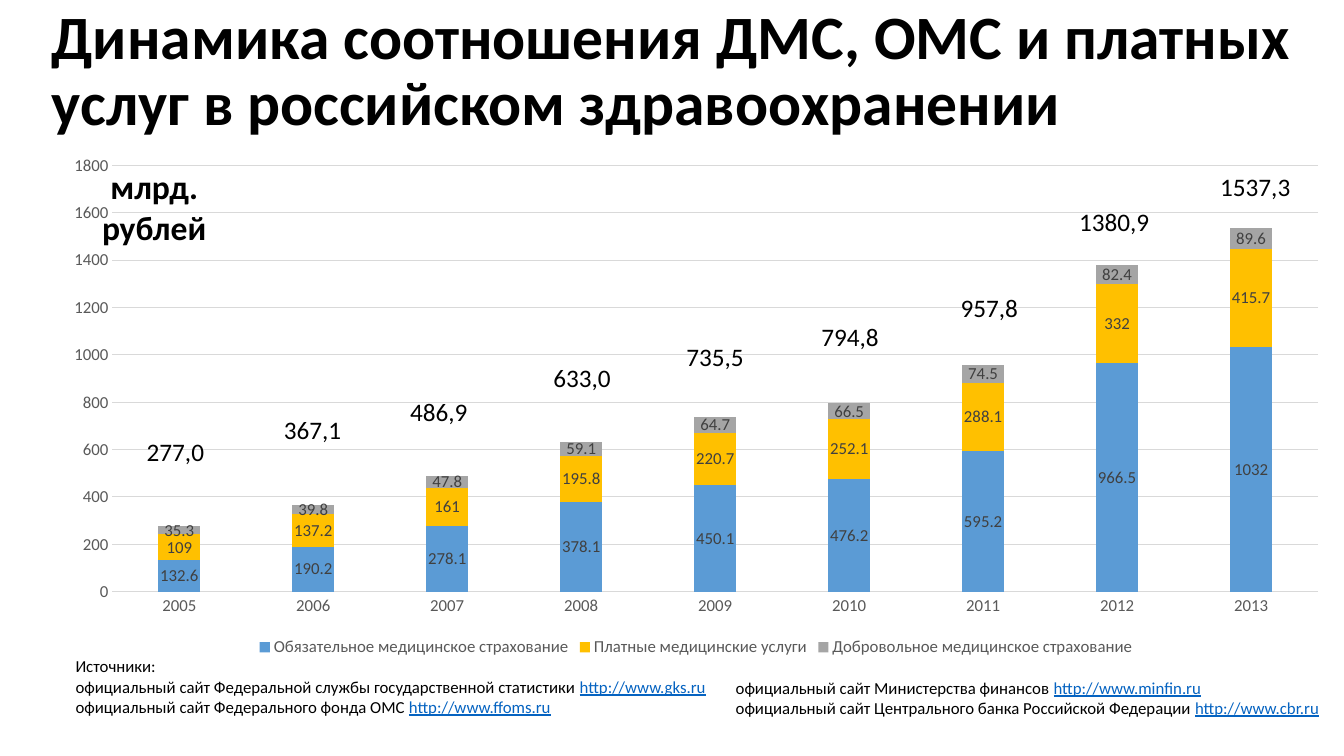
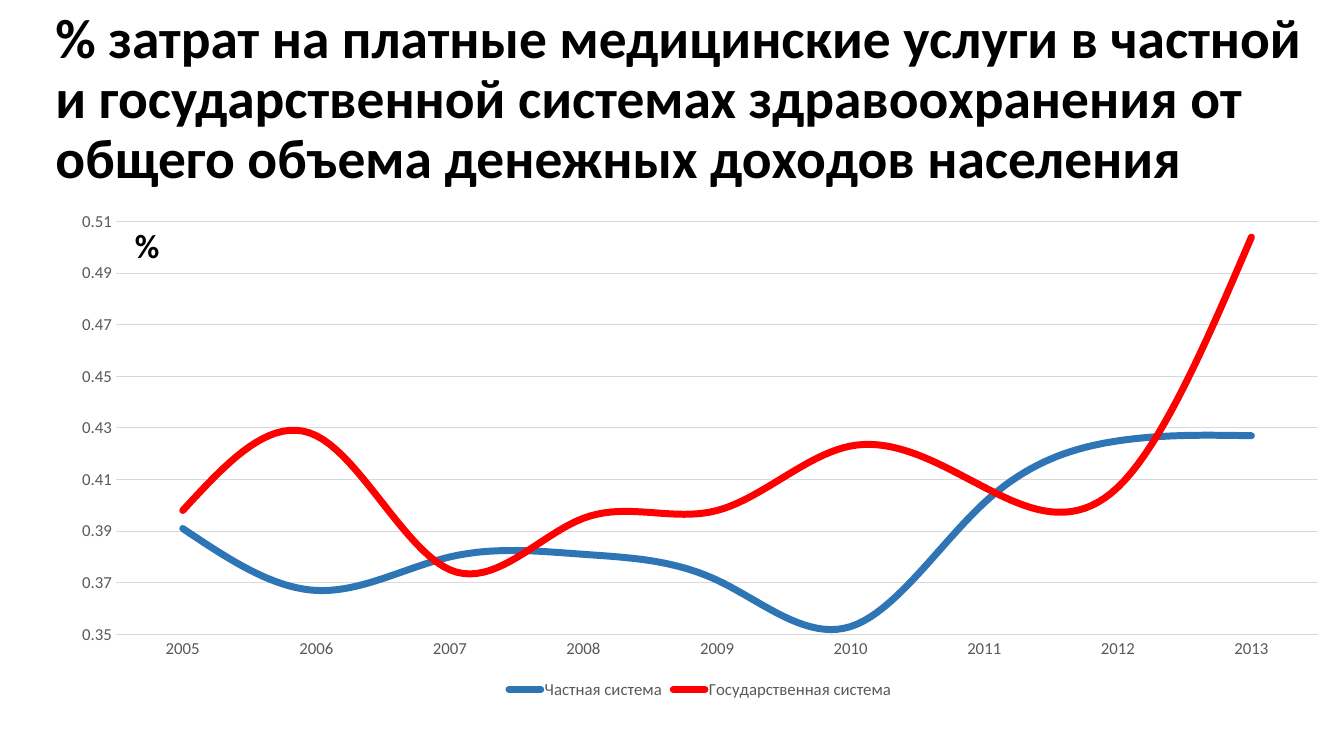
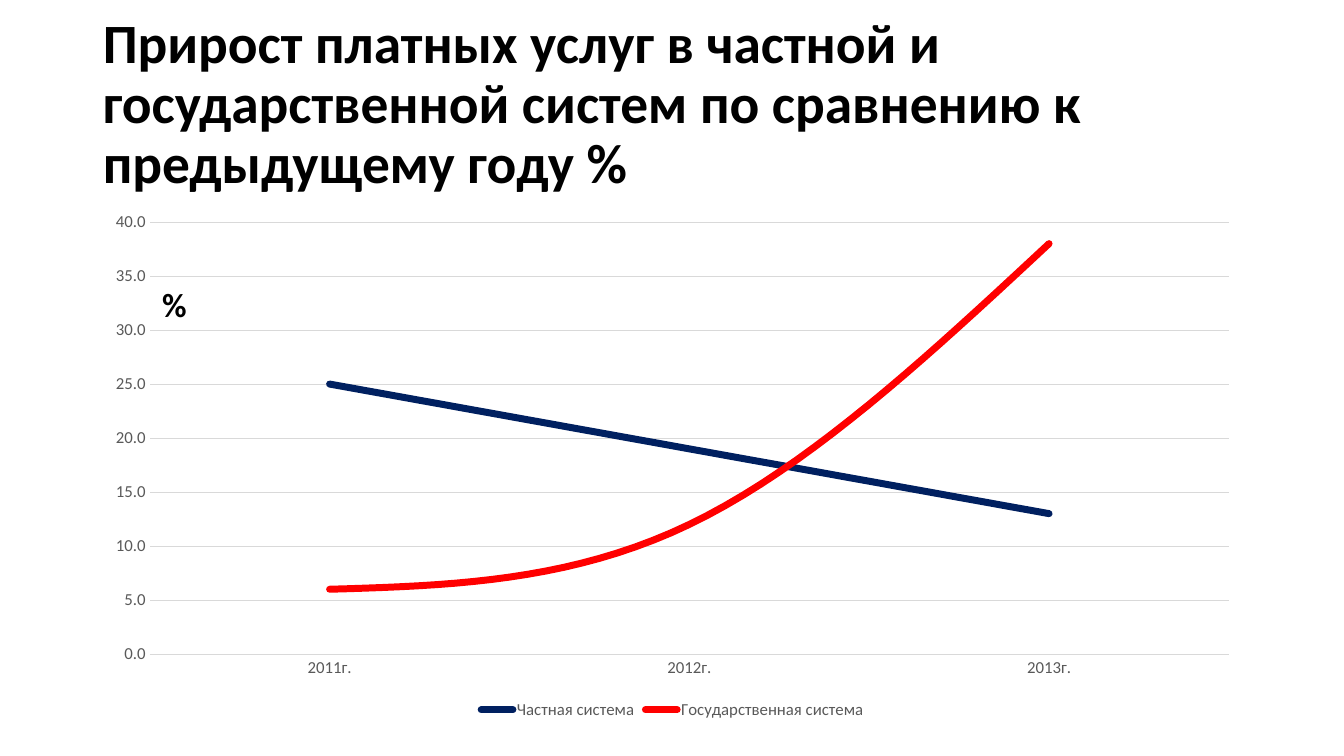
"""Build three slides on paid, compulsory and voluntary medical care."""
from pptx import Presentation
from pptx.chart.data import CategoryChartData
from pptx.dml.color import RGBColor
from pptx.enum.chart import XL_CHART_TYPE, XL_LABEL_POSITION, XL_LEGEND_POSITION, XL_TICK_MARK
from pptx.enum.text import MSO_ANCHOR, MSO_AUTO_SIZE, PP_ALIGN
from pptx.util import Inches, Pt

BLACK = RGBColor(0x00, 0x00, 0x00)
AXIS_GREY = RGBColor(0x59, 0x59, 0x59)
LABEL_GREY = RGBColor(0x40, 0x40, 0x40)
GRID_GREY = RGBColor(0xD9, 0xD9, 0xD9)
LINK_BLUE = RGBColor(0x05, 0x63, 0xC1)
SKY = RGBColor(0x5B, 0x9B, 0xD5)
GOLD = RGBColor(0xFF, 0xC0, 0x00)
SILVER = RGBColor(0xA5, 0xA5, 0xA5)
BLUE = RGBColor(0x2E, 0x75, 0xB6)
NAVY = RGBColor(0x00, 0x20, 0x60)
RED = RGBColor(0xFF, 0x00, 0x00)

FONT = "Calibri"
TITLE_ONLY = 5
YEARS = [str(year) for year in range(2005, 2014)]


class Deck:
    """Hold the shared style and the current slide; lengths are percent of the slide."""

    def __init__(self):
        self.show = Presentation()
        self.show.slide_width = Inches(13.33)
        self.show.slide_height = Inches(7.5)
        self.slide = None

    def place(self, left, top, width, height):
        across = self.show.slide_width / 100
        down = self.show.slide_height / 100
        return [round(n) for n in (left * across, top * down, width * across, height * down)]

    def style(self, font, size, color, bold=False):
        font.name = FONT
        font.size = Pt(size)
        font.color.rgb = color
        font.bold = bold

    def phrase(self, paragraph, text, size, color=BLACK, bold=False):
        run = paragraph.add_run()
        run.text = text
        self.style(run.font, size, color, bold)
        return run

    def title(self, text, area, size):
        self.slide = self.show.slides.add_slide(self.show.slide_layouts[TITLE_ONLY])
        heading = self.slide.shapes.title
        heading.left, heading.top, heading.width, heading.height = self.place(*area)
        frame = heading.text_frame
        frame.auto_size = MSO_AUTO_SIZE.NONE
        frame.vertical_anchor = MSO_ANCHOR.MIDDLE
        line = frame.paragraphs[0]
        line.alignment = PP_ALIGN.LEFT
        line.line_spacing = 0.9
        self.phrase(line, text, size, bold=True)

    def frame(self, area):
        frame = self.slide.shapes.add_textbox(*self.place(*area)).text_frame
        frame.word_wrap = True
        return frame

    def caption(self, text, area, size, bold=False):
        line = self.frame(area).paragraphs[0]
        line.alignment = PP_ALIGN.CENTER
        self.phrase(line, text, size, bold=bold)

    def unit(self, text, left, top):
        self.caption(text, (left, top, 12.15, 3.47), 24, bold=True)

    def sources(self, entries, area):
        frame = self.frame(area)
        for index, (owner, address) in enumerate(entries):
            line = frame.add_paragraph() if index else frame.paragraphs[0]
            self.phrase(line, owner, 12)
            if address:
                self.phrase(line, address, 12, LINK_BLUE).font.underline = True

    def chart(self, kind, area, categories, series, scale, number_format="General"):
        data = CategoryChartData()
        data.categories = categories
        for name, values, _ in series:
            data.add_series(name, values)
        chart = self.slide.shapes.add_chart(kind, *self.place(*area), data).chart
        chart.has_title = False
        self.style(chart.font, 12, AXIS_GREY)
        chart.has_legend = True
        chart.legend.position = XL_LEGEND_POSITION.BOTTOM
        chart.legend.include_in_layout = False
        self.style(chart.legend.font, 12, AXIS_GREY)

        years, amounts = chart.category_axis, chart.value_axis
        for axis in (years, amounts):
            axis.major_tick_mark = axis.minor_tick_mark = XL_TICK_MARK.NONE
            self.style(axis.tick_labels.font, 12, AXIS_GREY)
        amounts.minimum_scale, amounts.maximum_scale, amounts.major_unit = scale
        amounts.tick_labels.number_format = number_format
        amounts.tick_labels.number_format_is_linked = False
        amounts.format.line.fill.background()
        for rule in (years.format.line, amounts.major_gridlines.format.line):
            rule.color.rgb = GRID_GREY
            rule.width = Pt(0.75)
        return chart

    def stacked_chart(self, area, categories, series, scale):
        plot = self.chart(XL_CHART_TYPE.COLUMN_STACKED, area, categories, series, scale).plots[0]
        plot.vary_by_categories = False
        plot.gap_width = 219
        plot.overlap = 100
        plot.has_data_labels = True
        plot.data_labels.show_value = True
        plot.data_labels.position = XL_LABEL_POSITION.CENTER
        self.style(plot.data_labels.font, 12, LABEL_GREY)
        for column, (_, _, color) in zip(plot.series, series):
            column.format.fill.solid()
            column.format.fill.fore_color.rgb = color

    def line_chart(self, area, categories, series, scale, number_format):
        chart = self.chart(XL_CHART_TYPE.LINE, area, categories, series, scale, number_format)
        chart.plots[0].vary_by_categories = False
        for curve, (_, _, color) in zip(chart.plots[0].series, series):
            curve.smooth = True
            curve.format.line.color.rgb = color
            curve.format.line.width = Pt(5)
        for stroke in chart.element.xpath(".//c:ser/c:spPr/a:ln"):
            stroke.set("cap", "rnd")


def insurance_slide(deck):
    deck.title("Динамика соотношения ДМС, ОМС и платных услуг в российском здравоохранении",
               (3.08, -0.1, 96.92, 19.33), 44)
    deck.stacked_chart((3.6, 19.2, 96.4, 68.27), YEARS, [
        ("Обязательное медицинское страхование",
         (132.6, 190.2, 278.1, 378.1, 450.1, 476.2, 595.2, 966.5, 1032), SKY),
        ("Платные медицинские услуги",
         (109, 137.2, 161, 195.8, 220.7, 252.1, 288.1, 332, 415.7), GOLD),
        ("Добровольное медицинское страхование",
         (35.3, 39.8, 47.8, 59.1, 64.7, 66.5, 74.5, 82.4, 89.6), SILVER),
    ], (0, 1800, 200))
    deck.sources([
        ("Источники:", ""),
        ("официальный сайт Федеральной службы государственной статистики ", "http://www.gks.ru"),
        ("официальный сайт Федерального фонда ОМС ", "http://www.ffoms.ru"),
    ], (4.88, 86.13, 50, 9.47))
    deck.sources([
        ("официальный сайт Министерства финансов ", "http://www.minfin.ru"),
        ("официальный сайт Центрального банка Российской Федерации ", "http://www.cbr.ru"),
    ], (54, 88.93, 46, 6.67))
    deck.unit("млрд. рублей", 5.4, 21.33)
    totals = [
        ("277,0", 13.05, 57.07), ("367,1", 23.25, 54.13), ("486,9", 32.65, 51.73),
        ("633,0", 43.3, 47.33), ("735,5", 53.2, 44.53), ("794,8", 63.25, 41.87),
        ("957,8", 73.6, 38), ("1380,9", 82.9, 26.67), ("1537,3", 93.4, 22),
    ]
    for total, center, top in totals:
        deck.caption(total, (center - 4, top, 8, 5.33), 18)


def spending_slide(deck):
    deck.title("% затрат на платные медицинские услуги в частной и государственной системах "
               "здравоохранения от общего объема денежных доходов населения",
               (3.38, 3.6, 96.62, 19.47), 39.6)
    deck.line_chart((4.2, 26.67, 95.8, 66.4), YEARS, [
        ("Частная система",
         (0.391, 0.367, 0.38, 0.381, 0.371, 0.353, 0.401, 0.425, 0.427), BLUE),
        ("Государственная система",
         (0.398, 0.427, 0.375, 0.395, 0.398, 0.423, 0.407, 0.407, 0.504), RED),
    ], (0.35, 0.51, 0.02), "#,##0.####")
    deck.unit("%", 4.88, 29.07)


def growth_slide(deck):
    deck.title("Прирост платных услуг в частной и государственной систем "
               "по сравнению к предыдущему году %", (6.9, 4.27, 91.37, 19.33), 39.6)
    deck.line_chart((6.9, 26.67, 86.27, 69.07), ["2011г.", "2012г.", "2013г."], [
        ("Частная система", (25, 19, 13), NAVY),
        ("Государственная система", (6, 12, 38), RED),
    ], (0, 40, 5), "0.0")
    deck.unit("%", 6.9, 36.93)


def main():
    deck = Deck()
    insurance_slide(deck)
    spending_slide(deck)
    growth_slide(deck)
    deck.show.save("out.pptx")


if __name__ == "__main__":
    main()
